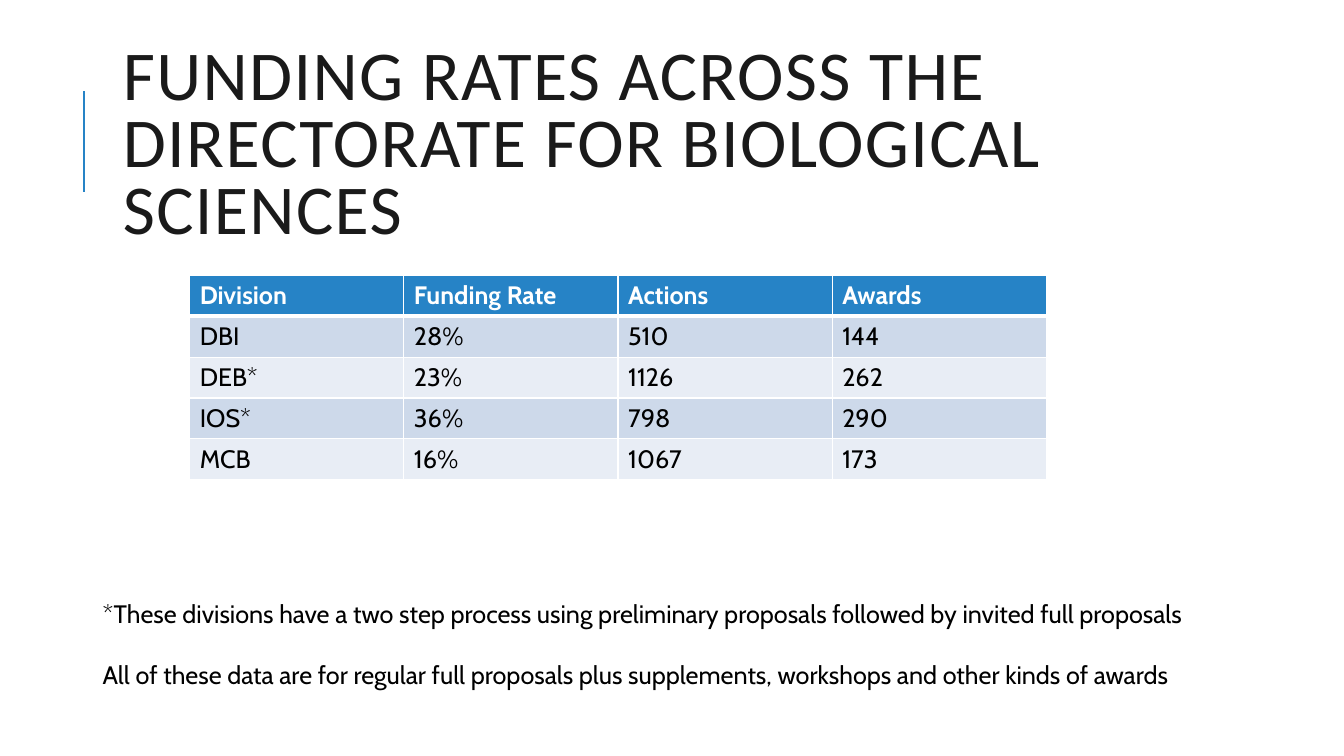
from lxml.etree import SubElement
from pptx import Presentation
from pptx.dml.color import RGBColor
from pptx.enum.text import MSO_ANCHOR
from pptx.oxml.ns import qn
from pptx.util import Pt

BLUE = RGBColor(0x26, 0x83, 0xC6)
BAND_DARK = RGBColor(0xCD, 0xD9, 0xEA)
BAND_LIGHT = RGBColor(0xE8, 0xED, 0xF5)
INK = RGBColor(0x1A, 0x1A, 0x1A)
BLACK = RGBColor(0, 0, 0)
WHITE = RGBColor(0xFF, 0xFF, 0xFF)

TITLE = "FUNDING RATES ACROSS THE DIRECTORATE FOR BIOLOGICAL SCIENCES"
FUNDING = [
    ["Division", "Funding Rate", "Actions", "Awards"],
    ["DBI", "28%", "510", "144"],
    ["DEB*", "23%", "1126", "262"],
    ["IOS*", "36%", "798", "290"],
    ["MCB", "16%", "1067", "173"],
]
NOTES = [
    "*These divisions have a two step process using preliminary proposals "
    "followed by invited full proposals",
    "All of these data are for regular full proposals plus supplements, "
    "workshops and other kinds of awards",
]


class SlideBuilder:
    heading_font = "Calibri"
    body_font = "Cabin"
    body_size = 18

    def __init__(self, slide):
        self.s = slide

    def format_runs(self, tf, font, size, color, bold=False):
        for p in tf.paragraphs:
            for r in p.runs:
                r.font.name = font
                r.font.size = Pt(size)
                r.font.bold = bold
                r.font.color.rgb = color

    def text_box(self, text, left, top, width, height, anchor=MSO_ANCHOR.TOP):
        tf = self.s.shapes.add_textbox(Pt(left), Pt(top), Pt(width), Pt(height)).text_frame
        tf.word_wrap = True
        tf.vertical_anchor = anchor
        tf.text = text
        return tf

    def title(self, text, *box):
        tf = self.text_box(text, *box, anchor=MSO_ANCHOR.MIDDLE)
        self.format_runs(tf, self.heading_font, 50, INK)
        p = tf.paragraphs[0]
        p.line_spacing = 0.8
        p.runs[0].font._element.set("spc", "100")

    def notes(self, lines, *box, gap):
        tf = self.text_box("\n".join(lines), *box)
        self.format_runs(tf, self.body_font, self.body_size, BLACK)
        for p in tf.paragraphs[1:]:
            p.space_before = Pt(gap)

    def line(self, x1, y1, x2, y2, color, width):
        sp = self.s.shapes.add_connector(1, Pt(x1), Pt(y1), Pt(x2), Pt(y2))
        sp.line.color.rgb = color
        sp.line.width = Pt(width)
        SubElement(sp._element.spPr, qn("a:effectLst"))

    def borders(self, cell, top, bottom):
        tcPr = cell._tc.get_or_add_tcPr()
        for side, width in (("L", 1), ("R", 1), ("T", top), ("B", bottom)):
            ln = SubElement(tcPr, qn(f"a:ln{side}"), w=str(Pt(width)))
            fill = SubElement(ln, qn("a:solidFill"))
            SubElement(fill, qn("a:srgbClr"), val=str(WHITE))

    def table(self, rows, left, top, width, row_height):
        frame = self.s.shapes.add_table(len(rows), len(rows[0]), Pt(left), Pt(top),
                                        Pt(width), Pt(row_height * len(rows)))
        for i, row in enumerate(rows):
            header = i == 0
            band = BLUE if header else BAND_DARK if i % 2 else BAND_LIGHT
            for j, value in enumerate(row):
                cell = frame.table.cell(i, j)
                cell.text = value
                cell.vertical_anchor = MSO_ANCHOR.MIDDLE
                # The rule under the header is heavier than the others
                self.borders(cell, 3 if i == 1 else 1, 3 if header else 1)
                cell.fill.solid()
                cell.fill.fore_color.rgb = band
                self.format_runs(cell.text_frame, self.body_font, self.body_size,
                                 WHITE if header else BLACK, header)


def main():
    prs = Presentation()
    prs.slide_width, prs.slide_height = Pt(960), Pt(540)
    b = SlideBuilder(prs.slides.add_slide(prs.slide_layouts[6]))

    # Title with its accent line
    b.line(60, 136.8, 60, 64.8, BLUE, 1.5)
    b.title(TITLE, 80.64, 46.08, 765.36, 118.08)

    # Funding rates by division
    b.table(FUNDING, 135.5, 196.7, 612, 29.2)

    # Notes below the table
    b.notes(NOTES, 66.24, 424, 814.3, 72.7, gap=21.6)

    prs.save("out.pptx")


if __name__ == "__main__":
    main()
